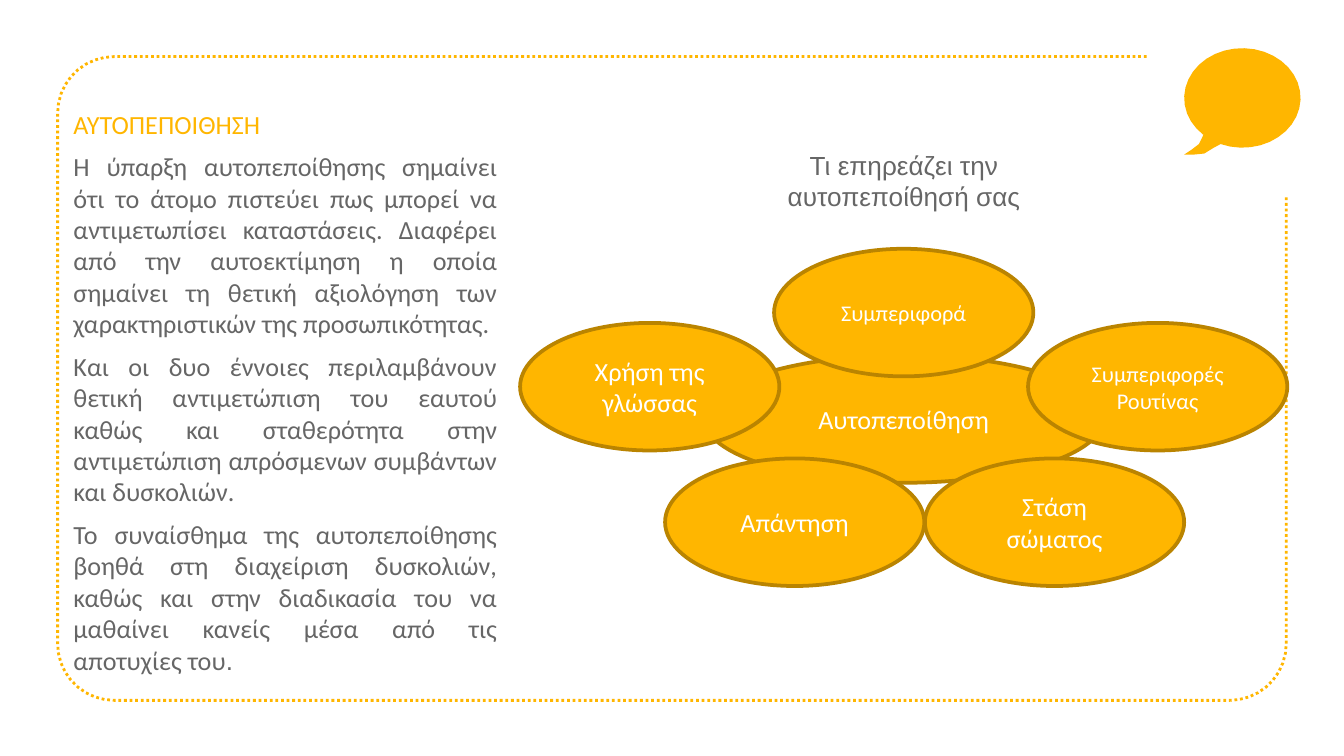
"""Build the slide on self-confidence: text on the left, ellipse diagram on the right."""
from math import cos, radians, sin

from pptx import Presentation
from pptx.dml.color import RGBColor
from pptx.enum.dml import MSO_LINE
from pptx.enum.shapes import MSO_SHAPE
from pptx.enum.text import MSO_ANCHOR, PP_ALIGN
from pptx.util import Cm, Pt

ELLIPSE = MSO_SHAPE.OVAL
DOTTED = MSO_LINE.ROUND_DOT
MIDDLE = MSO_ANCHOR.MIDDLE
CENTER = PP_ALIGN.CENTER
JUSTIFY = PP_ALIGN.JUSTIFY
YELLOW, BROWN, GREY, WHITE = "FFB600", "BA8400", "666666", "FFFFFF"


def arc(center_x, center_y, radius_x, radius_y, start, stop, step):
    """Return points in cm along an elliptical arc, angles in degrees."""
    return [(center_x + radius_x * cos(radians(angle)),
             center_y + radius_y * sin(radians(angle)))
            for angle in range(start, stop + step, step)]


def add_run(paragraph, text, size, color, font="Calibri"):
    """Append a formatted run to a paragraph."""
    run = paragraph.add_run()
    run.text = text
    run.font.size = Pt(size)
    run.font.name = font
    run.font.color.rgb = RGBColor.from_string(color)


presentation = Presentation()
presentation.slide_width = Cm(25.4)
presentation.slide_height = Cm(14.28)
slide = presentation.slides.add_slide(presentation.slide_layouts[6])
shapes = slide.shapes

left, top, right, bottom, radius = 1.09, 1.07, 24.31, 13.23, 1.07
frame_points = [
    (21.67, top),
    *arc(left + radius, top + radius, radius, radius, 270, 180, -10),
    *arc(left + radius, bottom - radius, radius, radius, 180, 90, -10),
    *arc(right - radius, bottom - radius, radius, radius, 90, 0, -10),
    (right, 3.71),
]
bubble_points = [
    *arc(23.48, 1.85, 1.1, 0.94, 132, 472, 10),
    (22.94, 2.79), (22.76, 2.9), (22.56, 2.92),
    (22.38, 2.92), (22.53, 2.82), (22.66, 2.72),
]
outlines = []
for points, closed in ((frame_points, False), (bubble_points, True)):
    corners = [(Cm(x), Cm(y)) for x, y in points]
    builder = shapes.build_freeform(*corners[0])
    builder.add_line_segments(corners[1:], close=closed)
    outline = builder.convert_to_shape()
    outline.shadow.inherit = False
    outlines.append(outline)
frame, bubble = outlines
frame.fill.background()
frame.line.color.rgb = RGBColor.from_string(YELLOW)
frame.line.width = Pt(1.5)
frame.line.dash_style = DOTTED
bubble.fill.solid()
bubble.fill.fore_color.rgb = RGBColor.from_string(YELLOW)
bubble.line.fill.background()

body = shapes.add_textbox(Cm(1.14), Cm(0.97), Cm(8.51), Cm(11.51)).text_frame
body.word_wrap = True
body.margin_left = body.margin_right = body.margin_bottom = Cm(0.25)
body.margin_top = Cm(1.07)
body_texts = [
    ("ΑΥΤΟΠΕΠΟΙΘΗΣΗ", YELLOW),
    ("Η ύπαρξη αυτοπεποίθησης σημαίνει ότι το άτομο πιστεύει πως μπορεί να "
     "αντιμετωπίσει καταστάσεις. Διαφέρει από την αυτοεκτίμηση η οποία σημαίνει "
     "τη θετική αξιολόγηση των χαρακτηριστικών της προσωπικότητας.", GREY),
    ("Και οι δυο έννοιες περιλαμβάνουν θετική αντιμετώπιση του εαυτού καθώς και "
     "σταθερότητα στην αντιμετώπιση απρόσμενων συμβάντων και δυσκολιών.", GREY),
    ("Το συναίσθημα της αυτοπεποίθησης βοηθά στη διαχείριση δυσκολιών, καθώς και "
     "στην διαδικασία του να μαθαίνει κανείς μέσα από τις αποτυχίες του", GREY),
]
for index, (text, color) in enumerate(body_texts):
    paragraph = body.add_paragraph() if index else body.paragraphs[0]
    paragraph.alignment = JUSTIFY
    paragraph.space_before = Pt(6 if index else 0)
    add_run(paragraph, text, 14, color)
add_run(paragraph, ".", 14, GREY, "Arial")

ellipses = [
    ("Αυτοπεποίθηση", 13.31, 6.71, 7.54, 14),
    ("Συμπεριφορά", 14.63, 4.7, 4.9, 12),
    ("Στάση σώματος", 17.48, 8.66, 4.9, 14),
    ("Χρήση της γλώσσας", 9.83, 6.1, 4.9, 14),
    ("Απάντηση", 12.57, 8.66, 4.9, 14),
    ("Συμπεριφορές Ρουτίνας", 19.43, 6.1, 4.9, 12),
]
for text, x, y, width, size in ellipses:
    shape = shapes.add_shape(ELLIPSE, Cm(x), Cm(y), Cm(width), Cm(2.41))
    shape.shadow.inherit = False
    shape.fill.solid()
    shape.fill.fore_color.rgb = RGBColor.from_string(YELLOW)
    shape.line.color.rgb = RGBColor.from_string(BROWN)
    shape.line.width = Pt(2)
    shape.text_frame.vertical_anchor = MIDDLE
    paragraph = shape.text_frame.paragraphs[0]
    paragraph.alignment = CENTER
    add_run(paragraph, text, size, WHITE)

question = shapes.add_textbox(Cm(13.82), Cm(2.69), Cm(6.53), Cm(1.68)).text_frame
question.word_wrap = True
paragraph = question.paragraphs[0]
paragraph.alignment = CENTER
paragraph.space_before = Pt(6)
add_run(paragraph, "Τι επηρεάζει την αυτοπεποίθησή σας", 14, GREY, "Arial")

presentation.save("out.pptx")
